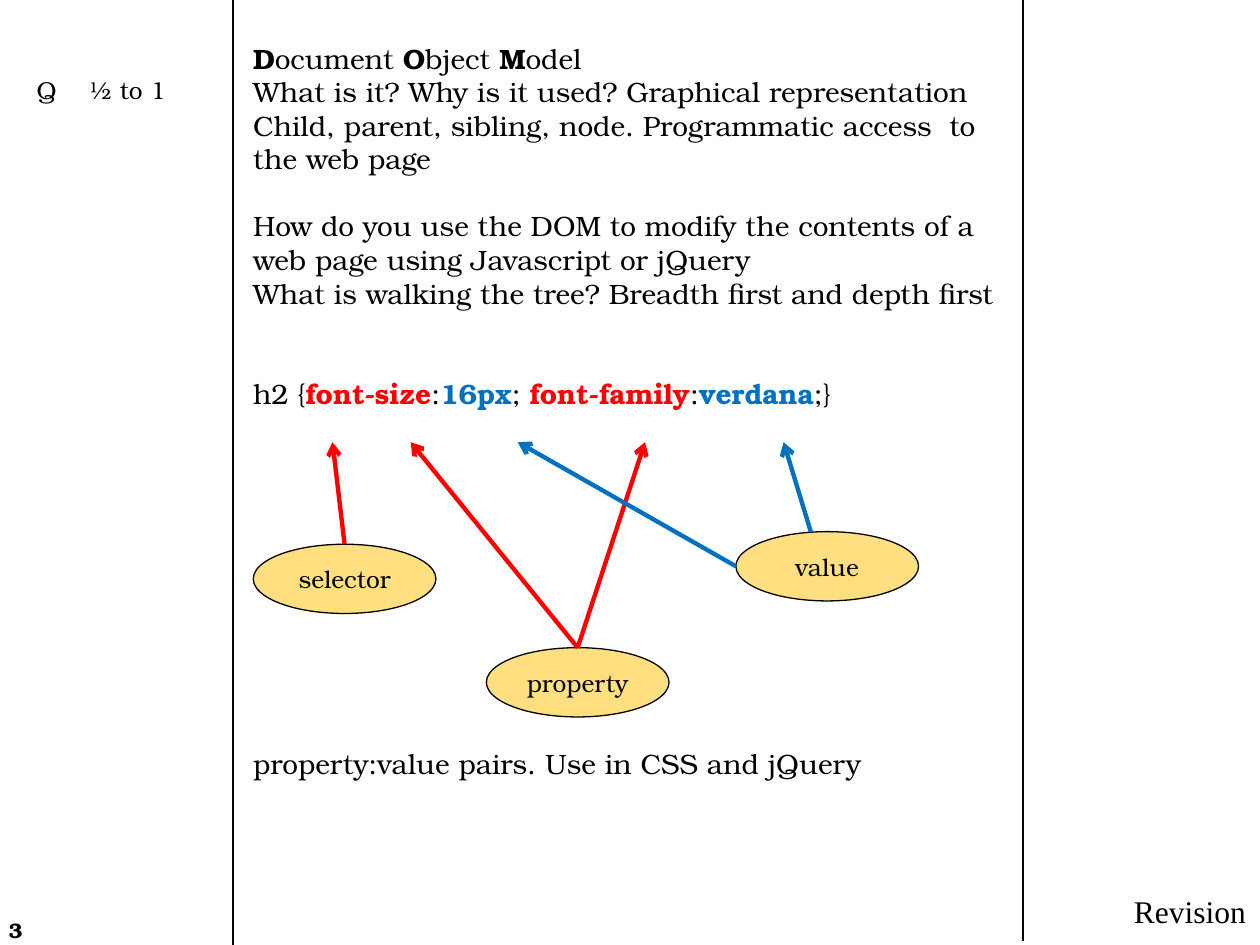
from lxml import etree
from pptx import Presentation
from pptx.dml.color import RGBColor
from pptx.enum import shapes, text
from pptx.oxml import ns
from pptx.util import Pt

BLACK = RGBColor(0, 0, 0)
WHITE = RGBColor(255, 255, 255)
RED = RGBColor(255, 0, 0)
BLUE = RGBColor(0, 0x70, 0xC0)
GOLD = RGBColor(255, 0xC0, 0)
SERIF = "TeX Gyre Bonum"

# Content: (empty lines above, [(text, colour, bold), ...])
NOTES = [
    (0, [("D", BLACK, True), ("ocument ", BLACK, False), ("O", BLACK, True),
         ("bject ", BLACK, False), ("M", BLACK, True), ("odel", BLACK, False)]),
    (0, [("What is it? Why is it used? Graphical representation", BLACK, False)]),
    (0, [("Child, parent, sibling, node. Programmatic access  to the web page", BLACK, False)]),
    (1, [("How do you use the DOM to modify the contents of a web page "
          "using Javascript or jQuery", BLACK, False)]),
    (0, [("What is walking the tree? Breadth first and depth first", BLACK, False)]),
    (2, [("h2 {", BLACK, False), ("font-size", RED, True), (":", BLACK, False),
         ("16px", BLUE, True), ("; ", BLACK, False), ("font-family", RED, True),
         (":", BLACK, False), ("verdana", BLUE, True), (";}", BLACK, False)]),
    (10, [("property:value pairs. Use in CSS and jQuery", BLACK, False)]),
]
# Label, left, top, arrow colour, arrows as (start as fraction of the oval, tip x)
TERMS = [
    ("selector", 144.7, 311, RED, [((0.5, 0), 190)]),
    ("property", 277.9, 370.1, RED, [((0.5, 0), 234.7), ((0.5, 0), 368.6)]),
    ("value", 420.5, 303.8, BLUE, [((0, 0.5), 295.9), ((0.41, 0), 447.8)]),
]
DIVIDERS = [(133.2, 540), (584.6, 537.8)]  # x, bottom
OVAL_W, OVAL_H = 104.4, 39.6
TIP_Y = 252.7
NOTE_LINE = 19.2

prs = Presentation()
prs.slide_width, prs.slide_height = Pt(720), Pt(540)
slide = prs.slides.add_slide(prs.slide_layouts[5])


def add_line(start, end, color, width, arrow=False):
    line = slide.shapes.add_connector(
        shapes.MSO_CONNECTOR.STRAIGHT, *(Pt(v) for v in (*start, *end)))
    line.line.color.rgb = color
    line.line.width = Pt(width)
    if arrow:
        etree.SubElement(line.line._get_or_add_ln(), ns.qn("a:tailEnd"), type="arrow")
    etree.SubElement(line._element.spPr, ns.qn("a:effectLst"))


def add_box(left, top, width, height, margins=(7.2, 3.6, 7.2, 3.6)):
    box = slide.shapes.add_textbox(Pt(left), Pt(top), Pt(width), Pt(height))
    set_frame(box.text_frame, margins)
    return box


def set_frame(frame, margins, anchor=text.MSO_ANCHOR.TOP):
    frame.word_wrap = True
    frame.auto_size = text.MSO_AUTO_SIZE.NONE
    frame.vertical_anchor = anchor
    (frame.margin_left, frame.margin_top,
     frame.margin_right, frame.margin_bottom) = (Pt(m) for m in margins)


def style(paragraph, size, align=text.PP_ALIGN.LEFT, font=SERIF, bold=False):
    paragraph.alignment = align
    paragraph.font.size = Pt(size)
    paragraph.font.name = font
    paragraph.font.bold = bold
    paragraph.font.color.rgb = BLACK


# Column dividers
for x, bottom in DIVIDERS:
    add_line((x, 0), (x, bottom), BLACK, 0.75)

# Notes column
notes = add_box(137.5, 0.7, 440.6, 491.8, (7.2, 3.6 + NOTE_LINE, 7.2, 3.6))
notes.fill.solid()
notes.fill.fore_color.rgb = WHITE
for i, (gap, runs) in enumerate(NOTES):
    frame = notes.text_frame
    paragraph = frame.add_paragraph() if i else frame.paragraphs[0]
    style(paragraph, 16)
    paragraph.space_before = Pt(gap * NOTE_LINE)
    for words, color, bold in runs:
        run = paragraph.add_run()
        run.text = words
        run.font.color.rgb = color
        run.font.bold = bold

# Page number
number = add_box(5, 521.3, 104.4, 15.8, (0, 2.9, 0, 0))
number.text_frame.text = "3"
style(number.text_frame.paragraphs[0], 12, bold=True)

# Title in the lower right corner
title = slide.shapes.title
title.left, title.top, title.width, title.height = Pt(591.8), Pt(485.3), Pt(127.4), Pt(52.6)
title.text_frame.text = "Revision"
set_frame(title.text_frame, (7.2, 24.3, 7.2, 3.6))
style(title.text_frame.paragraphs[0], 18, text.PP_ALIGN.RIGHT, "Times New Roman")

# Terms and the arrows to their place in the rule
for label, left, top, color, arrows in TERMS:
    oval = slide.shapes.add_shape(
        shapes.MSO_SHAPE.OVAL, Pt(left), Pt(top), Pt(OVAL_W), Pt(OVAL_H))
    oval.shadow.inherit = False
    oval.fill.solid()
    oval.fill.fore_color.rgb = GOLD
    gold = oval._element.spPr.find(".//" + ns.qn("a:srgbClr"))
    etree.SubElement(gold, ns.qn("a:alpha"), val="50000")
    oval.line.color.rgb = BLACK
    oval.line.width = Pt(0.75)
    oval.text_frame.text = label
    set_frame(oval.text_frame, (0, 0, 0, 0), text.MSO_ANCHOR.MIDDLE)
    style(oval.text_frame.paragraphs[0], 14, text.PP_ALIGN.CENTER)
    for (fx, fy), tip_x in arrows:
        start = (left + fx * OVAL_W, top + fy * OVAL_H)
        add_line(start, (tip_x, TIP_Y), color, 2.5, arrow=True)

# Question weight, with a tab between the letter and the range
weight = add_box(5, 39.6, 104.4, 24.5, (16, 3.6, 0, 3.6))
weight.text_frame.text = "Q\t½ to 1"
weight_line = weight.text_frame.paragraphs[0]
tabs = etree.Element(ns.qn("a:tabLst"))
etree.SubElement(tabs, ns.qn("a:tab"), pos=str(Pt(30)), algn="l")
weight_line._p.get_or_add_pPr().insert(0, tabs)
style(weight_line, 14)

prs.save("out.pptx")
